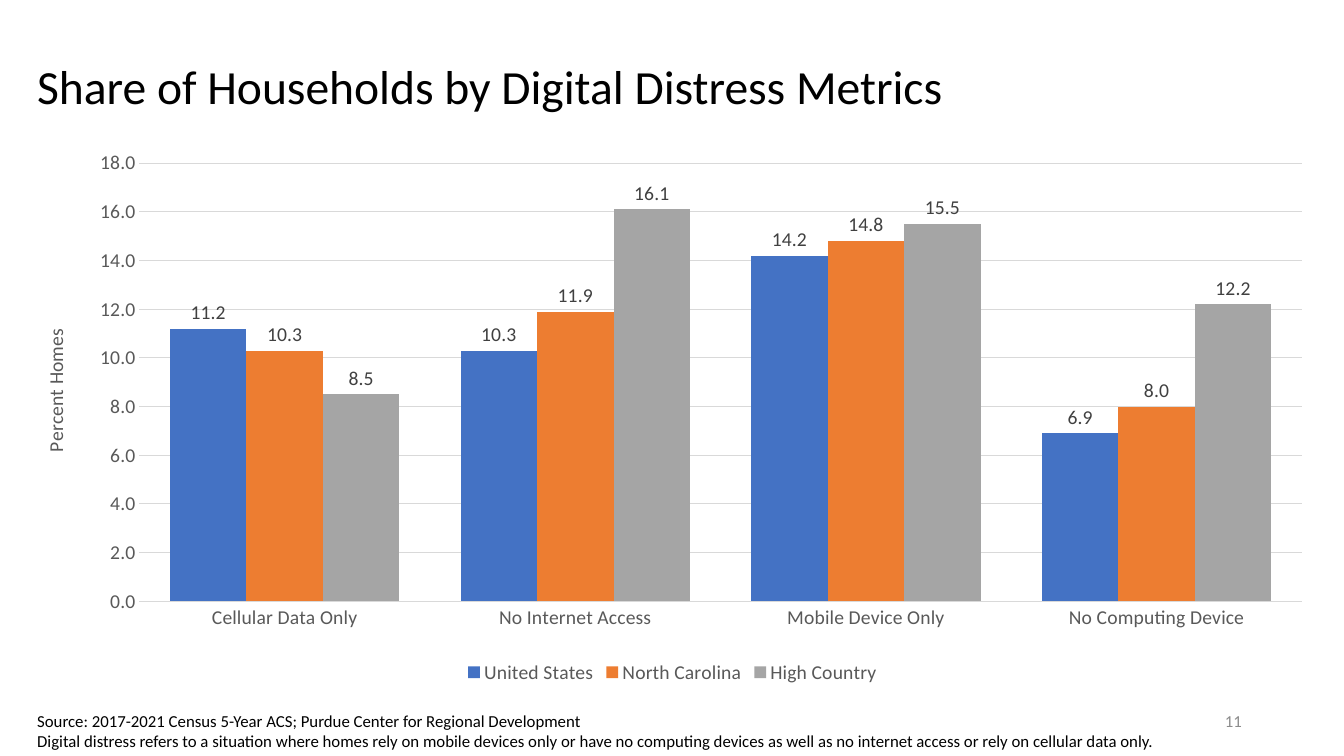
"""Build a slide with a column chart of digital distress metrics."""
from dataclasses import dataclass
from typing import Any

from lxml import etree
from pptx import Presentation
from pptx.chart.chart import Chart
from pptx.chart.data import CategoryChartData
from pptx.dml.color import RGBColor
from pptx.enum.chart import XL_CHART_TYPE, XL_LABEL_POSITION, XL_LEGEND_POSITION, XL_TICK_MARK
from pptx.enum.text import MSO_ANCHOR, MSO_AUTO_SIZE, PP_ALIGN
from pptx.oxml.ns import qn
from pptx.slide import Slide
from pptx.util import Inches, Pt

COLUMNS = XL_CHART_TYPE.COLUMN_CLUSTERED
OUTSIDE_END = XL_LABEL_POSITION.OUTSIDE_END
LEGEND_BOTTOM = XL_LEGEND_POSITION.BOTTOM
NO_TICKS = XL_TICK_MARK.NONE
TOP, MIDDLE = MSO_ANCHOR.TOP, MSO_ANCHOR.MIDDLE
GROW, FIXED = MSO_AUTO_SIZE.SHAPE_TO_FIT_TEXT, MSO_AUTO_SIZE.NONE
LEFT, RIGHT = PP_ALIGN.LEFT, PP_ALIGN.RIGHT

CELL = Inches(0.1)
PAGE_COLUMNS, PAGE_ROWS = 133.33, 75
NUMBER_FORMAT = "#,##0.0"


@dataclass(frozen=True)
class Theme:
    """Hold the typeface, colours and type sizes."""
    face: str = "Calibri"
    ink: str = "000000"
    axis: str = "595959"
    label: str = "404040"
    grid: str = "D9D9D9"
    page_number: str = "8C8C8C"
    title_size: float = 34
    chart_size: float = 14
    note_size: float = 12
    rule_width: float = 0.75


THEME = Theme()


@dataclass(frozen=True)
class Area:
    """Place an element in grid columns and rows."""
    column: float
    row: float
    columns: float
    rows: float

    def lengths(self) -> list[int]:
        """Return left, top, width and height."""
        return [round(cells * CELL) for cells in (self.column, self.row, self.columns, self.rows)]


@dataclass(frozen=True)
class TextBlock:
    """Describe one text box."""
    area: Area
    lines: tuple[str, ...]
    size: float
    color: str
    frame: dict[str, Any]
    para: dict[str, Any]


@dataclass(frozen=True)
class Region:
    """Describe one chart series."""
    name: str
    color: str
    shares: tuple[float, ...]


TEXT_BLOCKS = (
    TextBlock(Area(2.7, 3.4, 127.6, 10.9), ("Share of Households by Digital Distress Metrics",),
              THEME.title_size, THEME.ink,
              {"word_wrap": True, "vertical_anchor": MIDDLE, "auto_size": FIXED},
              {"alignment": LEFT, "line_spacing": 0.9}),
    TextBlock(Area(94.2, 69.5, 30, 4), ("11",), THEME.note_size, THEME.page_number,
              {"word_wrap": True, "vertical_anchor": MIDDLE, "auto_size": FIXED},
              {"alignment": RIGHT}),
    TextBlock(Area(2.7, 70, 113.8, 5),
              ("Source: 2017-2021 Census 5-Year ACS; Purdue Center for Regional Development",
               "Digital distress refers to a situation where homes rely on mobile devices only or have no "
               "computing devices as well as no internet access or rely on cellular data only."),
              THEME.note_size, THEME.ink,
              {"word_wrap": False, "vertical_anchor": TOP, "auto_size": GROW},
              {"alignment": LEFT}),
)

CHART_AREA = Area(2.7, 14.3, 128, 54)
PLOT_SHARES = {"x": 0.087, "y": 0.035, "w": 0.901, "h": 0.805}
METRICS = ("Cellular Data Only", "No Internet Access", "Mobile Device Only", "No Computing Device")
REGIONS = (
    Region("United States", "4472C4", (11.2, 10.3, 14.2, 6.9)),
    Region("North Carolina", "ED7D31", (10.3, 11.9, 14.8, 8.0)),
    Region("High Country", "A5A5A5", (8.5, 16.1, 15.5, 12.2)),
)


def assign(target: Any, values: dict[str, Any]) -> None:
    """Set each named attribute on the target."""
    for name, value in values.items():
        setattr(target, name, value)


def style_font(font: Any, size: float, color: str) -> None:
    """Apply the theme face with a size and colour."""
    assign(font, {"name": THEME.face, "size": Pt(size), "bold": False})
    font.color.rgb = RGBColor.from_string(color)


def style_rule(line: Any) -> None:
    """Draw a line as a thin grid rule."""
    line.width = Pt(THEME.rule_width)
    line.color.rgb = RGBColor.from_string(THEME.grid)


def add_text(page: Slide, block: TextBlock) -> None:
    """Add one text box, with breaks between its lines."""
    frame = page.shapes.add_textbox(*block.area.lengths()).text_frame
    assign(frame, block.frame)
    para = frame.paragraphs[0]
    assign(para, block.para)
    for index, line in enumerate(block.lines):
        if index:
            para.add_line_break()
        span = para.add_run()
        span.text = line
        style_font(span.font, block.size, block.color)


def place_plot(chart: Chart) -> None:
    """Fix the inner plot area as shares of the chart."""
    plot_area = chart.element.find(".//" + qn("c:plotArea"))
    for previous in plot_area.findall(qn("c:layout")):
        plot_area.remove(previous)
    layout = etree.Element(qn("c:layout"))
    manual = etree.SubElement(layout, qn("c:manualLayout"))
    settings = {"layoutTarget": "inner", "xMode": "edge", "yMode": "edge", **PLOT_SHARES}
    for name, value in settings.items():
        etree.SubElement(manual, qn(f"c:{name}")).set("val", str(value))
    plot_area.insert(0, layout)


def style_axes(chart: Chart) -> None:
    """Format both axes, the grid and the axis title."""
    category_axis, value_axis = chart.category_axis, chart.value_axis
    for axis in (category_axis, value_axis):
        assign(axis, {"major_tick_mark": NO_TICKS, "minor_tick_mark": NO_TICKS})
        style_font(axis.tick_labels.font, THEME.chart_size, THEME.axis)
    style_rule(category_axis.format.line)
    value_axis.format.line.fill.background()
    assign(value_axis, {"minimum_scale": 0, "maximum_scale": 18, "major_unit": 2})
    assign(value_axis.tick_labels, {"number_format": NUMBER_FORMAT, "number_format_is_linked": False})
    style_rule(value_axis.major_gridlines.format.line)
    title = value_axis.axis_title
    span = title.text_frame.paragraphs[0].add_run()
    span.text = "Percent Homes"
    style_font(span.font, THEME.chart_size, THEME.axis)
    body = title.element.find(".//" + qn("a:bodyPr"))
    for name, value in {"rot": "-5400000", "vert": "horz"}.items():
        body.set(name, value)


def add_distress_chart(page: Slide) -> None:
    """Add the clustered columns with labels and legend."""
    table = CategoryChartData(number_format=NUMBER_FORMAT)
    table.categories = METRICS
    for region in REGIONS:
        table.add_series(region.name, region.shares)
    chart = page.shapes.add_chart(COLUMNS, *CHART_AREA.lengths(), table).chart
    assign(chart, {"has_title": False, "has_legend": True})
    style_font(chart.font, THEME.chart_size, THEME.ink)
    assign(chart.legend, {"position": LEGEND_BOTTOM, "include_in_layout": False})
    style_font(chart.legend.font, THEME.chart_size, THEME.axis)
    plot = chart.plots[0]
    assign(plot, {"gap_width": 80, "overlap": 0, "vary_by_categories": False})
    for series, region in zip(plot.series, REGIONS):
        series.format.fill.solid()
        series.format.fill.fore_color.rgb = RGBColor.from_string(region.color)
        assign(series.data_labels, {"show_value": True, "position": OUTSIDE_END,
                                    "number_format": NUMBER_FORMAT, "number_format_is_linked": False})
        style_font(series.data_labels.font, THEME.chart_size, THEME.label)
    style_axes(chart)
    place_plot(chart)


def main() -> None:
    """Build and save the deck."""
    deck = Presentation()
    assign(deck, {"slide_width": round(PAGE_COLUMNS * CELL), "slide_height": PAGE_ROWS * CELL})
    page = deck.slides.add_slide(deck.slide_layouts[6])
    add_distress_chart(page)
    for block in TEXT_BLOCKS:
        add_text(page, block)
    deck.save("out.pptx")


if __name__ == "__main__":
    main()
